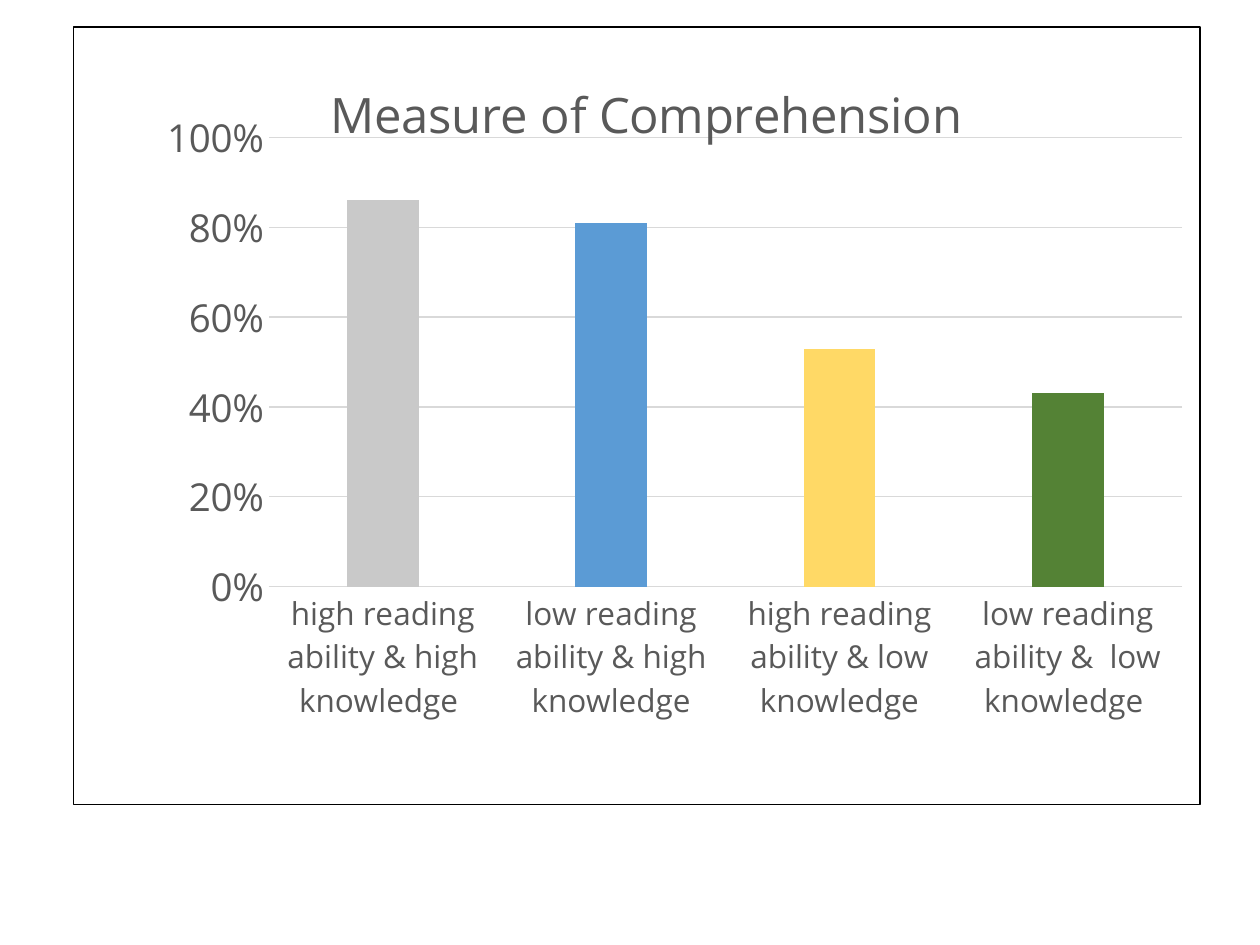
from lxml.etree import SubElement
from pptx import Presentation
from pptx.chart.data import CategoryChartData
from pptx.dml.color import RGBColor
from pptx.enum.chart import XL_CHART_TYPE as ChartType, XL_TICK_MARK as TickMark
from pptx.oxml import parse_xml
from pptx.oxml.ns import nsdecls, qn
from pptx.util import Inches, Pt

BLACK = RGBColor(0x00, 0x00, 0x00)
WHITE = RGBColor(0xFF, 0xFF, 0xFF)
TEXT_GRAY = RGBColor(0x59, 0x59, 0x59)
LINE_GRAY = RGBColor(0xD9, 0xD9, 0xD9)
SILVER = RGBColor(0xC9, 0xC9, 0xC9)
BLUE = RGBColor(0x5B, 0x9B, 0xD5)
YELLOW = RGBColor(0xFF, 0xD9, 0x66)
GREEN = RGBColor(0x54, 0x82, 0x35)

BARS = [
    ("high reading ability & high knowledge ", 0.86, SILVER),
    ("low reading ability & high knowledge", 0.81, BLUE),
    ("high reading ability & low knowledge", 0.53, YELLOW),
    ("low reading ability &  low knowledge ", 0.43, GREEN),
]


def manual_layout(**settings):
    """Return a c:layout element; values are fractions of the chart area."""
    layout = parse_xml(f"<c:layout {nsdecls('c')}><c:manualLayout/></c:layout>")
    for name, value in settings.items():
        SubElement(layout[0], qn(f"c:{name}")).set("val", str(value))
    return layout


def remove_layout(element):
    for layout in element.findall(qn("c:layout")):
        element.remove(layout)


class ChartSlide:
    font_name = "Open Sans"
    line_width = Pt(0.75)

    def __init__(self, presentation):
        self.slide = presentation.slides.add_slide(presentation.slide_layouts[6])

    def style_font(self, font, size):
        font.name = self.font_name
        font.size = Pt(size)
        font.bold = False
        font.color.rgb = TEXT_GRAY

    def style_line(self, line):
        line.color.rgb = LINE_GRAY
        line.width = self.line_width

    def add_column_chart(self, bars, left, top, width, height):
        categories, values, colors = zip(*bars)
        data = CategoryChartData(number_format="0%")
        data.categories = categories
        data.add_series("Series 1", values)
        chart = self.slide.shapes.add_chart(
            ChartType.COLUMN_CLUSTERED, Inches(left), Inches(top),
            Inches(width), Inches(height), data).chart
        chart.has_legend = False
        chart.font.name = "Calibri"
        chart.font.size = Pt(10)
        chart.font.color.rgb = BLACK

        plot = chart.plots[0]
        plot.gap_width = 219
        plot.overlap = -27
        plot.vary_by_categories = False
        series = plot.series[0]
        series.format.fill.solid()
        series.format.fill.fore_color.rgb = BLUE
        for index, color in enumerate(colors):
            if color != BLUE:
                fill = series.points[index].format.fill
                fill.solid()
                fill.fore_color.rgb = color
        return chart

    def style_axes(self, chart):
        for axis, size in ((chart.category_axis, 18), (chart.value_axis, 22)):
            axis.major_tick_mark = axis.minor_tick_mark = TickMark.NONE
            self.style_font(axis.tick_labels.font, size)
        self.style_line(chart.category_axis.format.line)
        value_axis = chart.value_axis
        value_axis.minimum_scale = 0
        value_axis.maximum_scale = 1
        value_axis.major_unit = 0.2
        value_axis.format.line.fill.background()
        self.style_line(value_axis.major_gridlines.format.line)
        value_axis.tick_labels.number_format = "0%"
        value_axis.tick_labels.number_format_is_linked = False

    def add_chart_title(self, chart, text, x, y):
        title = chart.chart_title
        run = title.text_frame.paragraphs[0].add_run()
        run.text = text
        self.style_font(run.font, 28)
        element = title._element
        remove_layout(element)
        element.find(qn("c:tx")).addnext(
            manual_layout(xMode="edge", yMode="edge", x=x, y=y))
        title.include_in_layout = False

    def place_plot(self, chart, x, y, w, h):
        plot_area = chart._chartSpace.chart.plotArea
        remove_layout(plot_area)
        plot_area.insert(0, manual_layout(
            layoutTarget="inner", xMode="edge", yMode="edge", x=x, y=y, w=w, h=h))

    def add_chart_border(self, chart):
        chart._chartSpace.chart.addnext(parse_xml(
            f"<c:spPr {nsdecls('c', 'a')}>"
            f'<a:solidFill><a:srgbClr val="{WHITE}"/></a:solidFill>'
            f'<a:ln w="{self.line_width}"><a:solidFill><a:srgbClr val="{BLACK}"/>'
            "</a:solidFill></a:ln></c:spPr>"))


def main():
    presentation = Presentation()
    presentation.slide_width = Inches(10)
    presentation.slide_height = Inches(7.5)

    page = ChartSlide(presentation)
    chart = page.add_column_chart(BARS, 0.58, 0.21, 8.95, 6.18)
    page.style_axes(chart)
    page.add_chart_title(chart, "Measure of Comprehension", x=0.22, y=0.05)
    page.place_plot(chart, x=0.173, y=0.142, w=0.811, h=0.578)
    page.add_chart_border(chart)

    presentation.save("out.pptx")


if __name__ == "__main__":
    main()
